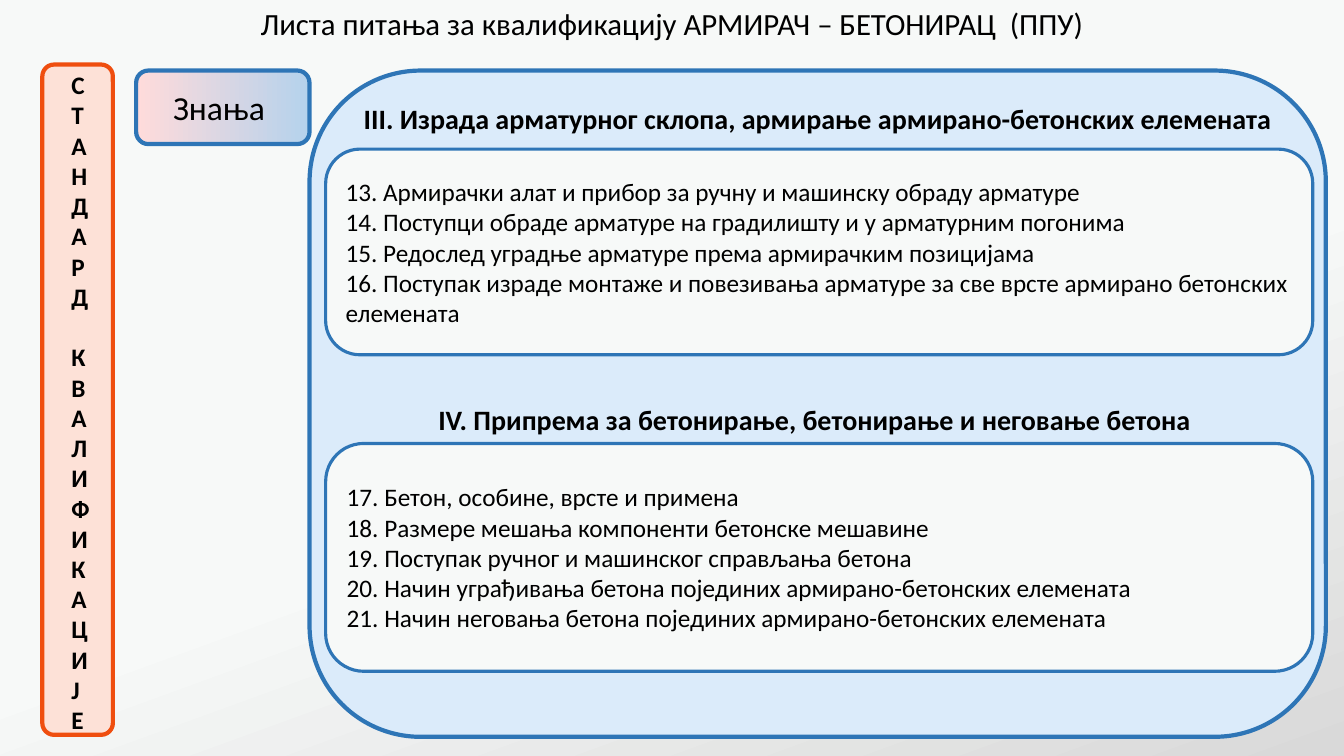
from pptx import Presentation
from pptx.dml.color import RGBColor
from pptx.enum.shapes import MSO_SHAPE
from pptx.enum.text import MSO_ANCHOR, MSO_AUTO_SIZE, PP_ALIGN
from pptx.util import Inches, Pt

BLACK = RGBColor(0x00, 0x00, 0x00)
BLUE = RGBColor(0x2E, 0x75, 0xB6)
PALE_BLUE = RGBColor(0xDB, 0xEB, 0xFA)
SKY = RGBColor(0xB5, 0xD2, 0xEC)
PINK = RGBColor(0xFF, 0xDB, 0xDB)
ORANGE = RGBColor(0xEF, 0x4E, 0x0F)
PEACH = RGBColor(0xFD, 0xE1, 0xD7)
PAPER = RGBColor(0xF7, 0xF9, 0xF8)
GREY = RGBColor(0xD9, 0xD9, 0xD9)

SECTIONS = [
    ("III. Израда арматурног склопа, армирање армирано-бетонских елемената", 0.96, 1.48, 2.04, [
        "13. Армирачки алат и прибор за ручну и машинску обраду арматуре",
        "14. Поступци обраде арматуре на градилишту и у арматурним погонима",
        "15. Редослед уградње арматуре према армирачким позицијама",
        "16. Поступак израде монтаже и повезивања арматуре за све врсте армирано бетонских елемената",
    ]),
    ("IV. Припрема за бетонирање, бетонирање и неговање бетона ", 3.94, 4.4, 2.26, [
        "17. Бетон, особине, врсте и примена",
        "18. Рaзмере мешања компоненти бетонске мешавине",
        "19. Поступак ручног и машинског справљања бетона",
        "20. Начин уграђивања бетона појединих армирано-бетонских елемената",
        "21. Начин неговања бетона појединих армирано-бетонских елемената",
    ]),
]


class QuestionSlide:
    """Holds the slide and the style shared by its elements."""

    font = "Calibri"

    def __init__(self, s):
        self.s = s

    def gradient(self, fill, stops, angle):
        fill.gradient()
        fill.gradient_angle = angle
        for stop, (position, color) in zip(fill.gradient_stops, stops):
            stop.position = position
            stop.color.rgb = color

    def background(self, stops, angle):
        self.gradient(self.s.background.fill, stops, angle)

    def paragraphs(self, tf, lines, size, bold=False, align=PP_ALIGN.LEFT):
        tf.word_wrap = True
        for i, line in enumerate(lines):
            p = tf.add_paragraph() if i else tf.paragraphs[0]
            p.alignment = align
            r = p.add_run()
            r.text = line
            r.font.name = self.font
            r.font.size = Pt(size)
            r.font.bold = bold
            r.font.color.rgb = BLACK

    def text(self, box, lines, size, bold=False, align=PP_ALIGN.CENTER):
        tf = self.s.shapes.add_textbox(*map(Inches, box)).text_frame
        self.paragraphs(tf, lines, size, bold, align)
        tf.auto_size = MSO_AUTO_SIZE.SHAPE_TO_FIT_TEXT

    def panel(self, box, fill, line=BLUE, width=3, lines=(), size=18, align=PP_ALIGN.LEFT):
        sp = self.s.shapes.add_shape(MSO_SHAPE.ROUNDED_RECTANGLE, *map(Inches, box))
        sp.shadow.inherit = False
        if isinstance(fill, RGBColor):
            sp.fill.solid()
            sp.fill.fore_color.rgb = fill
        else:
            self.gradient(sp.fill, fill, 0)
        sp.line.color.rgb = line
        sp.line.width = Pt(width)
        sp.text_frame.vertical_anchor = MSO_ANCHOR.MIDDLE
        self.paragraphs(sp.text_frame, lines, size, align=align)


def main():
    prs = Presentation()
    prs.slide_width, prs.slide_height = Inches(13.33), Inches(7.5)
    slide = QuestionSlide(prs.slides.add_slide(prs.slide_layouts[6]))
    slide.background([(0, GREY), (0.45, PAPER)], 110)

    slide.panel((3.07, 0.7, 10.08, 6.61), PALE_BLUE)
    for heading, heading_top, top, height, questions in SECTIONS:
        slide.text((3.07, heading_top, 10.08, 0.44), [heading], 20, bold=True)
        slide.panel((3.23, top, 9.79, height), PAPER, width=2.25, lines=questions)

    slide.text((0, 0, 13.33, 0.47), ["Листа питања за квалификацију АРМИРАЧ – БЕТОНИРАЦ  (ППУ)"], 22)
    slide.panel((0.42, 0.64, 0.7, 6.65), PEACH, ORANGE)
    slide.text((0.61, 0.64, 0.32, 6.76), ["СТАНДАРД", " КВАЛИФИКАЦИЈЕ"], 18, bold=True, align=PP_ALIGN.LEFT)
    slide.panel((1.35, 0.7, 1.72, 0.73), [(0, PINK), (1, SKY)], lines=["Знања "], size=24, align=PP_ALIGN.CENTER)

    prs.save("out.pptx")


if __name__ == "__main__":
    main()
